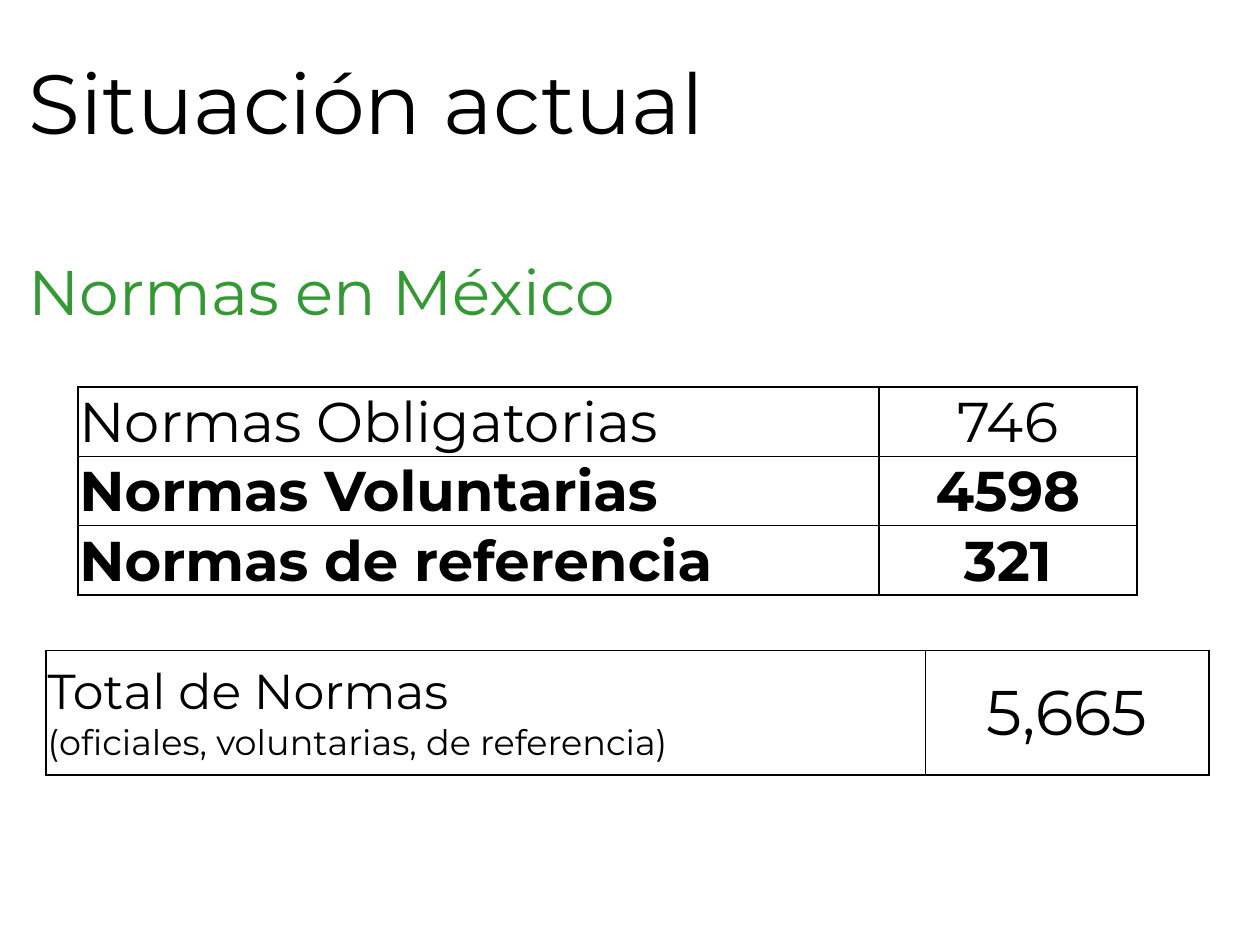
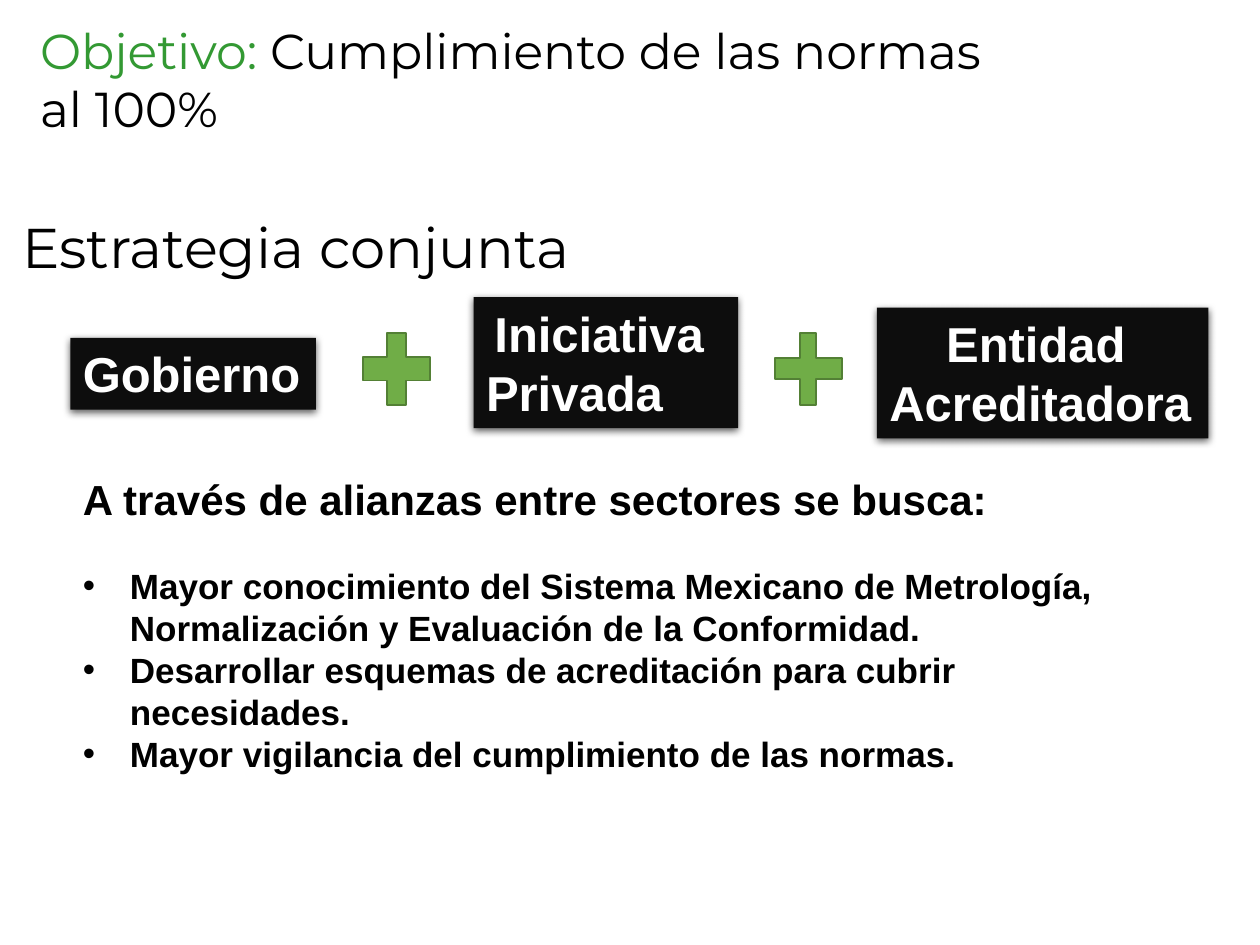
from lxml import etree
from pptx import Presentation
from pptx.dml.color import RGBColor
from pptx.enum.shapes import MSO_SHAPE
from pptx.enum.text import MSO_ANCHOR, PP_ALIGN
from pptx.oxml import parse_xml
from pptx.oxml.ns import nsdecls, qn
from pptx.util import Cm, Pt

RECTANGLE = MSO_SHAPE.RECTANGLE
CROSS = MSO_SHAPE.CROSS
MIDDLE = MSO_ANCHOR.MIDDLE
TOP = MSO_ANCHOR.TOP
LEFT = PP_ALIGN.LEFT
CENTER = PP_ALIGN.CENTER

COLORS = {
    "text": "000000",
    "accent": "339933",
    "sector": "0D0D0D",
    "sector_text": "FFFFFF",
    "plus": "70AD47",
    "plus_line": "538035",
}
HEADING_FONT = "Montserrat"
BODY_FONT = "Arial"


def color(name):
    return RGBColor.from_string(COLORS[name])


def add_run(paragraph, text, size, font_name=HEADING_FONT, color_name="text", bold=False):
    run = paragraph.add_run()
    run.text = text
    run.font.size = Pt(size)
    run.font.name = font_name
    run.font.bold = bold
    run.font.color.rgb = color(color_name)


def next_paragraph(text_frame, index):
    return text_frame.add_paragraph() if index else text_frame.paragraphs[0]


def add_text_box(slide, left, top, width, height, anchor=TOP):
    box = slide.shapes.add_textbox(Cm(left), Cm(top), Cm(width), Cm(height))
    box.text_frame.word_wrap = True
    box.text_frame.vertical_anchor = anchor
    return box.text_frame


def add_title(slide, text, left, top, size, color_name="text"):
    text_frame = add_text_box(slide, left, top, 21.9, 3.68, MIDDLE)
    paragraph = text_frame.paragraphs[0]
    paragraph.line_spacing = 0.9
    add_run(paragraph, text, size, color_name=color_name)


def add_borders(cell):
    properties = cell._tc.get_or_add_tcPr()
    for index, side in enumerate(("lnL", "lnR", "lnT", "lnB")):
        border = parse_xml(
            f'<a:{side} {nsdecls("a")} w="{Pt(1)}"><a:solidFill>'
            f'<a:srgbClr val="{COLORS["text"]}"/></a:solidFill></a:{side}>'
        )
        properties.insert(index, border)


def fill_cell(cell, lines, alignment, bold):
    cell.fill.background()
    cell.vertical_anchor = MIDDLE
    cell.margin_left = cell.margin_right = cell.margin_top = Cm(0.03)
    cell.margin_bottom = 0
    for index, (text, size) in enumerate(lines):
        paragraph = next_paragraph(cell.text_frame, index)
        paragraph.alignment = alignment
        add_run(paragraph, text, size, bold=bold)
    add_borders(cell)


def add_count_table(slide, left, top, column_widths, row_height, rows):
    frame = slide.shapes.add_table(
        len(rows), len(column_widths), Cm(left), Cm(top),
        Cm(sum(column_widths)), Cm(row_height * len(rows)),
    )
    table = frame.table
    table.first_row = table.horz_banding = False
    for column, width in zip(table.columns, column_widths):
        column.width = Cm(width)
    for row_index, (label, count, bold) in enumerate(rows):
        table.rows[row_index].height = Cm(row_height)
        fill_cell(table.cell(row_index, 0), label, LEFT, bold)
        fill_cell(table.cell(row_index, 1), count, CENTER, bold)


def add_shadow(shape):
    shape._element.spPr.append(parse_xml(
        f'<a:effectLst {nsdecls("a")}><a:outerShdw blurRad="{Pt(4.5)}" dist="{Pt(1.5)}" '
        f'dir="5400000" algn="ctr" rotWithShape="0"><a:srgbClr val="{COLORS["text"]}">'
        '<a:alpha val="63000"/></a:srgbClr></a:outerShdw></a:effectLst>'
    ))


def add_sector(slide, left, top, width, height, lines):
    shape = slide.shapes.add_shape(RECTANGLE, Cm(left), Cm(top), Cm(width), Cm(height))
    shape.fill.solid()
    shape.fill.fore_color.rgb = color("sector")
    shape.line.fill.background()
    add_shadow(shape)
    text_frame = shape.text_frame
    text_frame.word_wrap = False
    text_frame.vertical_anchor = TOP
    for index, (text, alignment) in enumerate(lines):
        paragraph = next_paragraph(text_frame, index)
        paragraph.alignment = alignment
        add_run(paragraph, text, 28, BODY_FONT, "sector_text", True)


def add_plus(slide, left, adjustment):
    shape = slide.shapes.add_shape(CROSS, Cm(left), Cm(6.71), Cm(1.35), Cm(1.45))
    shape.shadow.inherit = False
    shape.adjustments[0] = adjustment
    shape.fill.solid()
    shape.fill.fore_color.rgb = color("plus")
    shape.line.color.rgb = color("plus_line")
    shape.line.width = Pt(1)


def add_bullet(paragraph):
    properties = paragraph._p.get_or_add_pPr()
    properties.set("marL", str(Cm(0.95)))
    properties.set("indent", str(Cm(-0.95)))
    font = etree.SubElement(properties, qn("a:buFont"))
    font.set("typeface", BODY_FONT)
    bullet = etree.SubElement(properties, qn("a:buChar"))
    bullet.set("char", "•")


def add_goals(slide, introduction, goals):
    text_frame = add_text_box(slide, 1.42, 9.42, 22.02, 6.58)
    add_run(text_frame.paragraphs[0], introduction, 24, BODY_FONT, bold=True)
    for index, goal in enumerate(goals):
        paragraph = text_frame.add_paragraph()
        if index == 0:
            paragraph.space_before = Pt(23)
        add_bullet(paragraph)
        add_run(paragraph, goal, 20, BODY_FONT, bold=True)


def build_situation(slide):
    add_title(slide, "Normas en México", 0.33, 4.11, 36, "accent")
    heading = add_text_box(slide, 0.33, 0.89, 16.36, 2.31)
    add_run(heading.paragraphs[0], "Situación actual", 48)
    counts = [
        ("Normas Obligatorias", "746", False),
        ("Normas Voluntarias", "4598", True),
        ("Normas de referencia", "321", True),
    ]
    rows = [([(label, 32)], [(count, 32)], bold) for label, count, bold in counts]
    add_count_table(slide, 1.57, 7.8, (16.15, 5.2), 1.4, rows)
    total_label = [("Total de Normas", 28), ("(oficiales, voluntarias, de referencia)", 20)]
    add_count_table(slide, 0.93, 13.11, (17.73, 5.71), 2.51,
                    [(total_label, [("5,665", 36)], False)])


def build_strategy(slide):
    add_title(slide, "Estrategia conjunta", 0.2, 3.2, 32)
    add_sector(slide, 1.42, 6.81, 4.95, 1.45, [("Gobierno", LEFT)])
    add_sector(slide, 9.55, 5.99, 5.33, 2.64, [("Iniciativa ", CENTER), ("Privada", LEFT)])
    add_sector(slide, 17.68, 6.2, 6.68, 2.64, [("Entidad ", CENTER), ("Acreditadora", LEFT)])
    add_plus(slide, 7.32, 0.36)
    add_plus(slide, 15.62, 0.38)
    add_goals(slide, "A través de alianzas entre sectores se busca:", [
        "Mayor conocimiento del Sistema Mexicano de Metrología, "
        "Normalización y Evaluación de la Conformidad.",
        "Desarrollar esquemas de acreditación para cubrir necesidades.",
        "Mayor vigilancia del cumplimiento de las normas.",
    ])
    objective = add_text_box(slide, 0.56, 0.28, 19.66, 2.64).paragraphs[0]
    add_run(objective, "Objetivo: ", 28, color_name="accent")
    add_run(objective, "Cumplimiento de las normas al 100%", 28)


def main():
    presentation = Presentation()
    presentation.slide_width = Cm(25.4)
    presentation.slide_height = Cm(19.05)
    blank_layout = presentation.slide_layouts[6]
    for build in (build_situation, build_strategy):
        build(presentation.slides.add_slide(blank_layout))
    presentation.save("out.pptx")


if __name__ == "__main__":
    main()
